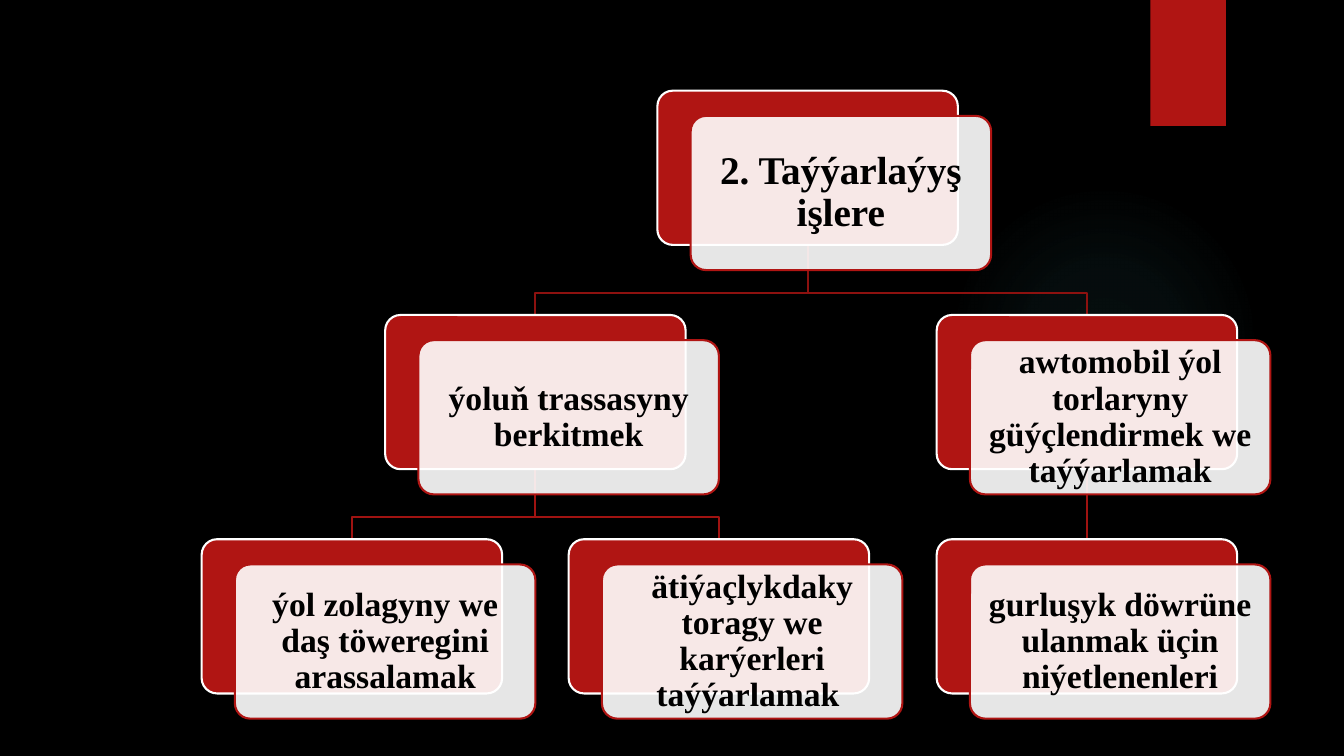
from lxml import etree
from pptx import Presentation
from pptx.dml.color import RGBColor
from pptx.enum import shapes, text
from pptx.oxml import ns
from pptx.util import Inches, Pt

# Content: key -> (parent, left, level, text size, wording)
TREE = {
    "works": (None, 6.52, 0, 28, "2. Taýýarlaýyş işlere"),
    "route": ("works", 3.82, 1, 24, "ýoluň trassasyny berkitmek"),
    "strip": ("route", 2.0, 2, 24, "ýol zolagyny we daş töweregini arassalamak"),
    "reserve": ("route", 5.64, 2, 24, "ätiýaçlykdaky toragy we karýerleri taýýarlamak "),
    "roads": ("works", 9.29, 1, 24, "awtomobil ýol torlaryny güýçlendirmek we taýýarlamak"),
    "building": ("roads", 9.29, 2, 24, "gurluşyk döwrüne ulanmak üçin niýetlenenleri"),
}
COLORS = {"back": "000000", "red": "B01513", "white": "FFFFFF", "text": "000000",
          "glow": "50B9C1", "link1": "8D110F", "link2": "A01311"}
GLOW_STOPS = [(0, 7), (36, 6), (69, 0)]  # position %, opacity %
NODE_W, NODE_H = 2.98, 1.53
TOP, LEVEL_STEP = 0.9, 2.225
CARD_DX, CARD_DY = 0.33, 0.25
BEND_GAP = 0.22
CARD_FRAME = {"word_wrap": True, "vertical_anchor": text.MSO_ANCHOR.MIDDLE,
              "margin_left": Inches(0.05), "margin_right": Inches(0.05),
              "margin_top": Inches(0.05), "margin_bottom": Inches(0.05)}
CARD_PARAGRAPH = {"alignment": text.PP_ALIGN.CENTER, "line_spacing": 0.9}
CARD_FONT = {"name": "Times New Roman", "bold": True}


def rgb(name):
    return RGBColor.from_string(COLORS[name])


def apply(target, values):
    for key, value in values.items():
        setattr(target, key, value)


def sub(parent, tag, **attrs):
    return etree.SubElement(parent, ns.qn(tag), attrs)


def add_box(kind, left, top, width, height, fill, line=None):
    box = slide.shapes.add_shape(kind, *map(Inches, (left, top, width, height)))
    box.shadow.inherit = False
    box.fill.solid()
    box.fill.fore_color.rgb = rgb(fill)
    if line:
        box.adjustments[0] = 0.1
        box.line.color.rgb = rgb(line)
        box.line.width = Pt(1.5)
    else:
        box.line.fill.background()
    return box


def node_top(level):
    return TOP + level * LEVEL_STEP


def add_link(parent, child):
    _, parent_left, parent_level, *_ = TREE[parent]
    _, child_left, level, *_ = TREE[child]
    x1, x2 = parent_left + NODE_W / 2, child_left + NODE_W / 2
    y1, y2 = node_top(parent_level) + NODE_H, node_top(level)
    bend = y2 - BEND_GAP
    if x1 == x2:
        link = slide.shapes.add_connector(
            shapes.MSO_CONNECTOR.STRAIGHT, *map(Inches, (x1, y1, x2, y2)))
        sub(link._element.spPr, "a:effectLst")
    else:
        outline = slide.shapes.build_freeform(Inches(x1), Inches(y1))
        outline.add_line_segments(
            [(Inches(x), Inches(y)) for x, y in ((x1, bend), (x2, bend), (x2, y2))],
            close=False)
        link = outline.convert_to_shape()
        link.shadow.inherit = False
        link.fill.background()
    link.line.color.rgb = rgb(f"link{level}")
    link.line.width = Pt(1.5)


def add_node(left, level, size, wording):
    top = node_top(level)
    add_box(shapes.MSO_SHAPE.ROUNDED_RECTANGLE, left, top, NODE_W, NODE_H, "red", "white")
    card = add_box(shapes.MSO_SHAPE.ROUNDED_RECTANGLE, left + CARD_DX, top + CARD_DY,
                   NODE_W, NODE_H, "white", "red")
    sub(card.fill._xPr.find(".//" + ns.qn("a:srgbClr")), "a:alpha", val="90000")
    paragraph = card.text_frame.paragraphs[0]
    paragraph.text = wording
    apply(card.text_frame, CARD_FRAME)
    apply(paragraph, CARD_PARAGRAPH)
    apply(paragraph.font, CARD_FONT | {"size": Pt(size)})
    paragraph.font.color.rgb = rgb("text")


deck = Presentation()
deck.slide_width, deck.slide_height = Inches(13.33), Inches(7.5)
slide = deck.slides.add_slide(deck.slide_layouts[6])
slide.background.fill.solid()
slide.background.fill.fore_color.rgb = rgb("back")

# Soft glow and corner tab
glow = add_box(shapes.MSO_SHAPE.OVAL, 9.41, 1.83, 3.08, 3.08, "glow")
solid = glow._element.spPr.find(ns.qn("a:solidFill"))
gradient = etree.Element(ns.qn("a:gradFill"), rotWithShape="1")
stops = sub(gradient, "a:gsLst")
for position, opacity in GLOW_STOPS:
    stop = sub(stops, "a:gs", pos=str(position * 1000))
    sub(sub(stop, "a:srgbClr", val=COLORS["glow"]), "a:alpha", val=str(opacity * 1000))
sub(sub(gradient, "a:path", path="circle"), "a:fillToRect",
    l="50000", t="50000", r="50000", b="50000")
solid.getparent().replace(solid, gradient)
add_box(shapes.MSO_SHAPE.RECTANGLE, 11.41, 0, 0.75, 1.25, "red")

# Links lie behind the nodes
for key, (parent, *_) in TREE.items():
    if parent:
        add_link(parent, key)
for _, *node in TREE.values():
    add_node(*node)

deck.save("out.pptx")
